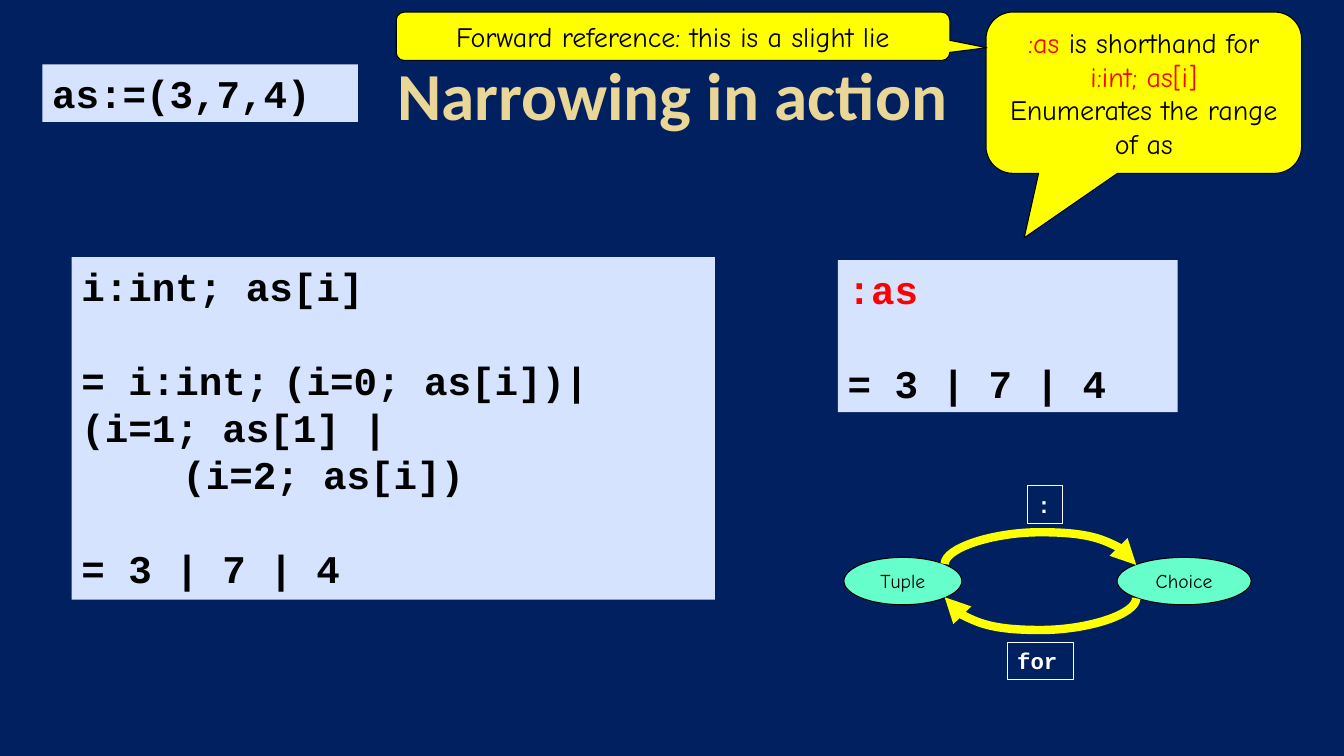
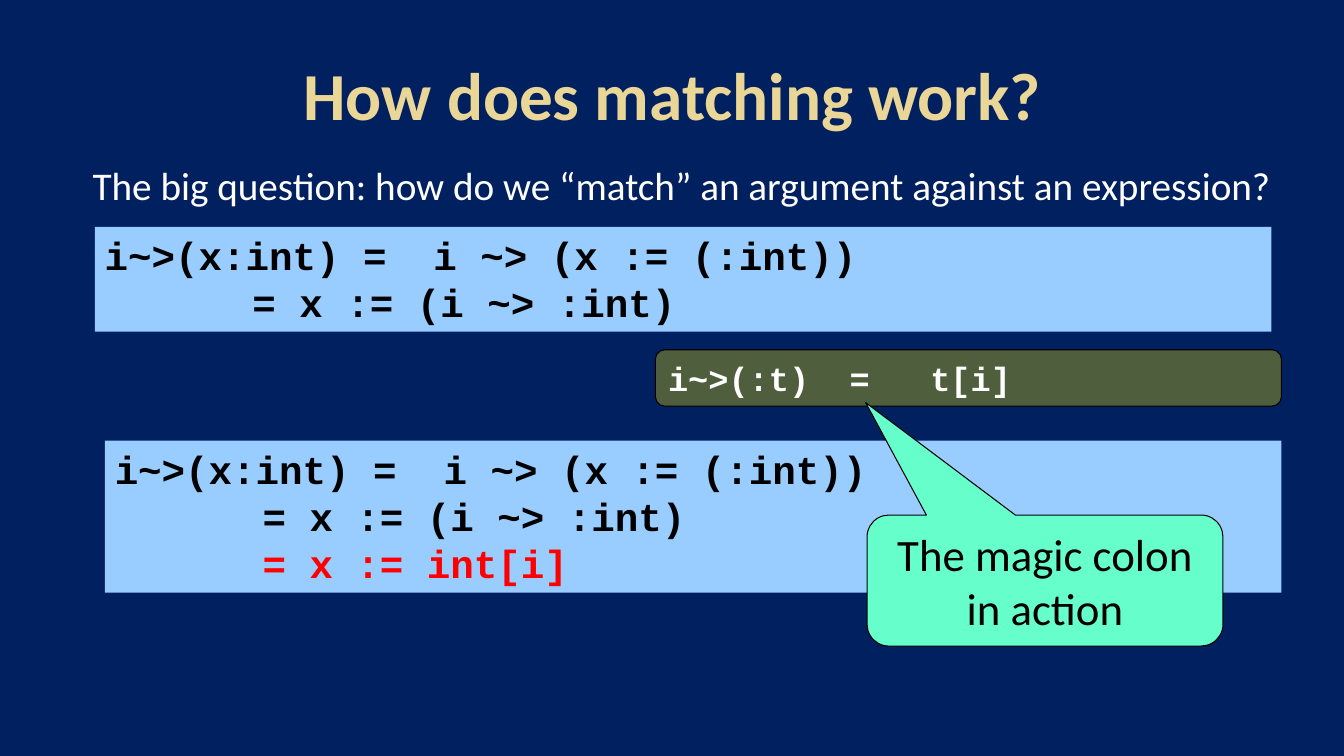
from dataclasses import dataclass

import lxml.etree
import pptx
import pptx.dml.color
import pptx.enum.shapes
import pptx.enum.text
import pptx.oxml.ns
import pptx.util

Inches = pptx.util.Inches
Kind = pptx.enum.shapes.MSO_SHAPE
Align = pptx.enum.text.PP_ALIGN
Anchor = pptx.enum.text.MSO_ANCHOR

COLORS = {
    "navy": "002060",
    "gold": "EAD696",
    "white": "FFFFFF",
    "black": "000000",
    "red": "FF0000",
    "yellow": "FFFF00",
    "mint": "66FFCC",
    "pale": "D6E3FF",
    "sky": "99CCFF",
    "olive": "4F5E3C",
}

CODE_FONT = "Courier New"
CODE_LINE_HEIGHT = 1.2


def font_format(name: str, size: float, bold: bool = False) -> dict:
    return {"name": name, "size": pptx.util.Pt(size), "bold": bold}


FORMATS = {
    "title": font_format("Calibri", 48, True),
    "body": font_format("Calibri", 28),
    "remark": font_format("Calibri", 32),
    "code": font_format(CODE_FONT, 28, True),
    "rule": font_format(CODE_FONT, 24, True),
    "label": font_format(CODE_FONT, 16, True),
    "note": font_format("Comic Neue", 20),
    "node": font_format("Comic Neue", 14),
}


@dataclass
class Run:
    text: str
    color: str | None = None


@dataclass
class Paragraph:
    runs: list[Run]
    lines_before: int = 0


@dataclass
class Box:
    """A text block; without a kind it is a plain text box."""
    at: tuple[float, float, float, float]
    paragraphs: list[Paragraph]
    format: str
    kind: Kind | None = Kind.RECTANGLE
    fill: str | None = None
    outline: str | None = None
    color: str = "black"
    align: Align = Align.LEFT
    anchor: Anchor = Anchor.TOP
    adjustments: tuple[float, ...] = ()


@dataclass
class Arc:
    """A flat curved arrow between connection sites of two shapes."""
    center: tuple[float, float]
    rotation: int
    start: tuple[str, int]
    end: tuple[str, int]


def line(text: str, color: str | None = None, lines_before: int = 0) -> Paragraph:
    return Paragraph([Run(text, color)], lines_before)


def title(text: str) -> Box:
    return Box((0.67, 0.3, 12, 1.25), [line(text)], "title", kind=None,
               color="gold", align=Align.CENTER, anchor=Anchor.MIDDLE)


def code(at: tuple, fill: str, *paragraphs: Paragraph) -> Box:
    return Box(at, list(paragraphs), "code", fill=fill)


def callout(at: tuple, tip: tuple[float, float], fill: str, format: str,
            *paragraphs: Paragraph) -> Box:
    return Box(at, list(paragraphs), format, Kind.ROUNDED_RECTANGULAR_CALLOUT,
               fill, "black", align=Align.CENTER, anchor=Anchor.MIDDLE,
               adjustments=(*tip, 0.167))


def node(at: tuple, name: str) -> Box:
    return Box(at, [line(name)], "node", Kind.OVAL, "mint", "black",
               align=Align.CENTER, anchor=Anchor.MIDDLE)


def label(at: tuple, text: str) -> Box:
    return Box(at, [line(text)], "label", outline="white", color="white")


def rgb(color: str) -> pptx.dml.color.RGBColor:
    return pptx.dml.color.RGBColor.from_string(COLORS[color])


def write_run(paragraph, run: Run, box: Box) -> None:
    for index, piece in enumerate(run.text.split("\n")):
        if index:
            paragraph.add_line_break()
        if not piece:
            continue
        text_run = paragraph.add_run()
        text_run.text = piece
        for attribute, value in FORMATS[box.format].items():
            setattr(text_run.font, attribute, value)
        text_run.font.color.rgb = rgb(run.color or box.color)


def write_text(frame, box: Box) -> None:
    frame.word_wrap = True
    frame.vertical_anchor = box.anchor
    font = FORMATS[box.format]
    for index, content in enumerate(box.paragraphs):
        paragraph = frame.add_paragraph() if index else frame.paragraphs[0]
        paragraph.alignment = box.align
        if font["name"] == CODE_FONT:
            height = pptx.util.Pt(font["size"].pt * CODE_LINE_HEIGHT)
            paragraph.line_spacing = height
            if content.lines_before:
                paragraph.space_before = pptx.util.Emu(height * content.lines_before)
        for run in content.runs:
            write_run(paragraph, run, box)


def draw_box(slide, box: Box):
    place = [Inches(value) for value in box.at]
    if box.kind is None:
        shape = slide.shapes.add_textbox(*place)
    else:
        shape = slide.shapes.add_shape(box.kind, *place)
        shape.shadow.inherit = False
        if box.fill:
            shape.fill.solid()
            shape.fill.fore_color.rgb = rgb(box.fill)
        else:
            shape.fill.background()
        if box.outline:
            shape.line.color.rgb = rgb(box.outline)
            shape.line.width = pptx.util.Pt(0.75)
        else:
            shape.line.fill.background()
        for index, value in enumerate(box.adjustments):
            shape.adjustments[index] = value
    write_text(shape.text_frame, box)
    return shape


def add_element(parent, tag: str, **attributes: str) -> None:
    element = lxml.etree.SubElement(parent, pptx.oxml.ns.qn(tag))
    for name, value in attributes.items():
        element.set(name, value)


def draw_arc(slide, arc: Arc, nodes: dict) -> None:
    span, thickness, bulge = 1.9, 0.01, 0.32
    x, y = arc.center
    left, top = x - thickness / 2, y - span / 2
    connector = slide.shapes.add_connector(
        pptx.enum.shapes.MSO_CONNECTOR.CURVE,
        Inches(left), Inches(top), Inches(left + thickness), Inches(top + span))
    connector.line.color.rgb = rgb("yellow")
    connector.line.width = pptx.util.Pt(6)

    qn = pptx.oxml.ns.qn
    properties = connector.element.spPr
    frame = properties.find(qn("a:xfrm"))
    frame.set("rot", str(arc.rotation * 60000))
    frame.set("flipH", "1")
    geometry = properties.find(qn("a:prstGeom"))
    if geometry.find(qn("a:avLst")) is None:
        add_element(geometry, "a:avLst")
    bend = round(-bulge / thickness * 100000)
    add_element(geometry.find(qn("a:avLst")), "a:gd", name="adj1", fmla=f"val {bend}")
    add_element(properties.find(qn("a:ln")), "a:tailEnd", type="triangle")
    add_element(properties, "a:effectLst")

    links = next(connector.element.iter(qn("p:cNvCxnSpPr")))
    for tag, (name, site) in (("a:stCxn", arc.start), ("a:endCxn", arc.end)):
        add_element(links, tag, id=str(nodes[name].shape_id), idx=str(site))


def add_slide(presentation, boxes: list[Box]):
    slide = presentation.slides.add_slide(presentation.slide_layouts[6])
    slide.background.fill.solid()
    slide.background.fill.fore_color.rgb = rgb("navy")
    for box in boxes:
        draw_box(slide, box)
    return slide


def add_narrowing_slide(presentation) -> None:
    slide = add_slide(presentation, [
        title("Narrowing in action"),
        code((0.71, 2.55, 6.38, 3.4), "pale",
             line("i:int; as[i]"),
             line("= i:int;\t(i=0; as[i])|\n(i=1; as[1] |", lines_before=1),
             line("\t\t(i=2; as[i])"),
             line("= 3 | 7 | 4", lines_before=1)),
        code((8.31, 2.58, 3.37, 1.51), "pale",
             line(":as", "red"), line("= 3 | 7 | 4", lines_before=1)),
        callout((9.78, 0.12, 3.13, 1.6), (-0.379, 0.9), "yellow", "note",
                Paragraph([Run(":as ", "red"), Run("is shorthand for\n"),
                           Run("i:int; as[i]", "red")]),
                line("Enumerates the range of as")),
        code((0.42, 0.64, 3.13, 0.57), "pale", line("as:=(3,7,4)")),
        callout((3.93, 0.12, 5.49, 0.48), (0.567, 0.236), "yellow", "note",
                line("Forward reference: this is a slight lie")),
        label((9.99, 6.37, 0.66, 0.37), "for"),
        label((10.19, 4.82, 0.35, 0.37), ":"),
    ])
    nodes = {
        "Tuple": draw_box(slide, node((8.37, 5.53, 1.17, 0.47), "Tuple")),
        "Choice": draw_box(slide, node((11.08, 5.53, 1.33, 0.47), "Choice")),
    }
    for arc in (Arc((10.32, 5.6), 270, ("Tuple", 7), ("Choice", 1)),
                Arc((10.32, 5.93), 90, ("Choice", 3), ("Tuple", 5))):
        draw_arc(slide, arc, nodes)


def add_matching_slide(presentation) -> None:
    derivation = [line("i~>(x:int) =  i ~> (x := (:int))"),
                  line("\t\t  = x := (i ~> :int)")]
    add_slide(presentation, [
        title("How does matching work?"),
        Box((0.82, 1.55, 12.07, 0.65),
            [line("The big question: how do we “match” an argument against an expression?")],
            "body", kind=None, color="white"),
        Box((6.5, 3.47, 6.21, 0.56), [line("i~>(:t)  =   t[i]")], "rule",
            Kind.ROUNDED_RECTANGLE, "olive", "black", "white", anchor=Anchor.MIDDLE),
        code((0.94, 2.25, 11.67, 1.04), "sky", *derivation),
        code((1.04, 4.37, 11.67, 1.51), "sky", *derivation,
             line("\t\t  = x := int[i]", "red")),
        callout((8.6, 5.11, 3.53, 1.3), (-0.504, -1.358), "mint", "remark",
                line("The magic colon in action")),
    ])


def main() -> None:
    presentation = pptx.Presentation()
    presentation.slide_width = Inches(13.33)
    presentation.slide_height = Inches(7.5)
    add_narrowing_slide(presentation)
    add_matching_slide(presentation)
    presentation.save("out.pptx")


if __name__ == "__main__":
    main()
